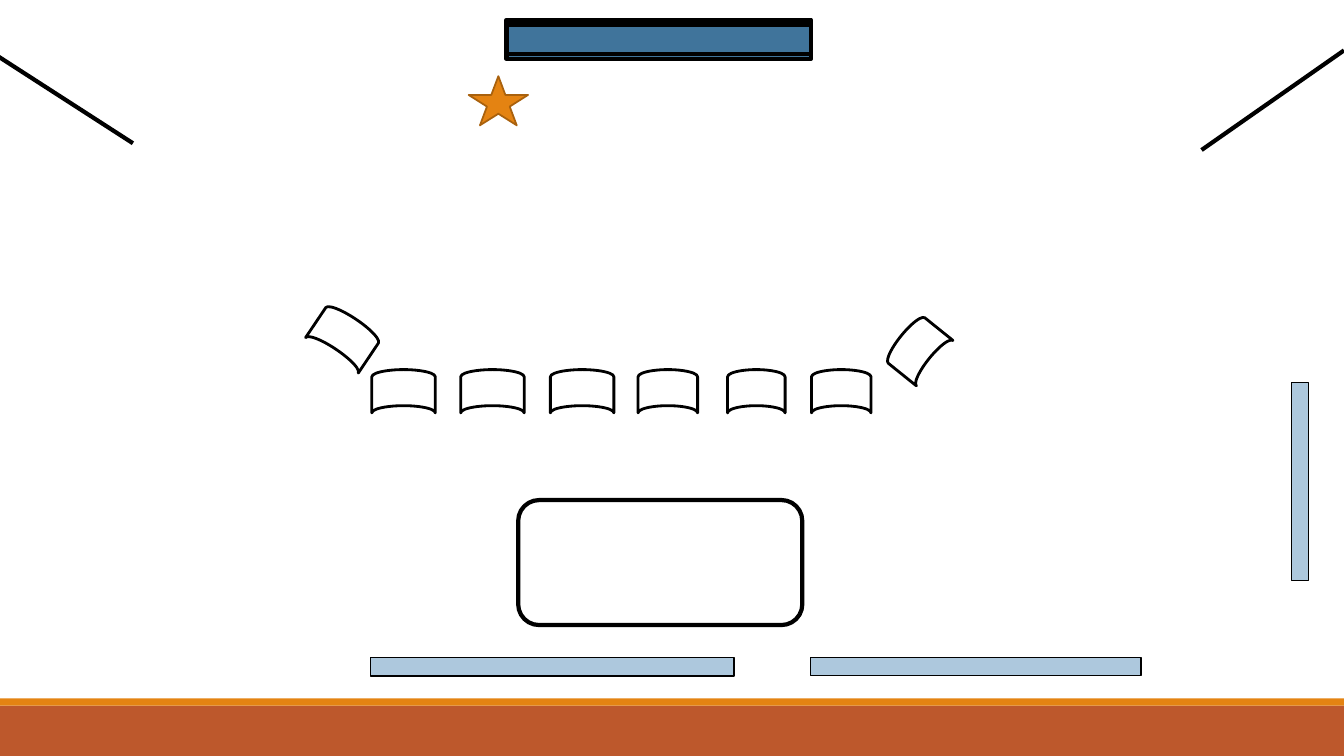
from lxml import etree
from pptx import Presentation
from pptx.dml.color import RGBColor
from pptx.enum.shapes import MSO_CONNECTOR, MSO_SHAPE
from pptx.oxml.ns import qn
from pptx.util import Cm, Pt

RECT = MSO_SHAPE.RECTANGLE
ROUNDED = MSO_SHAPE.ROUNDED_RECTANGLE
SCREEN = MSO_SHAPE.FLOWCHART_PREDEFINED_PROCESS
CHAIR = MSO_SHAPE.FLOWCHART_STORED_DATA
STAR = MSO_SHAPE.STAR_5_POINT
STRAIGHT = MSO_CONNECTOR.STRAIGHT

COLORS = {
    "black": "000000",
    "white": "FFFFFF",
    "rust": "BD582C",
    "orange": "E48312",
    "brown": "A9610D",
    "screen": "40749B",
    "window": "ADC8DD",
}
SLIDE_W, SLIDE_H = 33.87, 19.05


def rgb(name):
    return RGBColor.from_string(COLORS[name])


def add_centered(s, kind, cx, cy, w, h, fill, line=None, weight=1, rot=0):
    sp = s.shapes.add_shape(kind, Cm(cx - w / 2), Cm(cy - h / 2), Cm(w), Cm(h))
    sp.shadow.inherit = False
    sp.rotation = rot
    sp.fill.solid()
    sp.fill.fore_color.rgb = rgb(fill)
    if line:
        sp.line.color.rgb = rgb(line)
        sp.line.width = Pt(weight)
    else:
        sp.line.fill.background()


def add_wall(s, x1, y1, x2, y2):
    c = s.shapes.add_connector(STRAIGHT, Cm(x1), Cm(y1), Cm(x2), Cm(y2))
    c.line.color.rgb = rgb("black")
    c.line.width = Pt(3)
    etree.SubElement(c._element.spPr, qn("a:effectLst"))


def draw_footer(s, x, y, w, h):
    stripe = 0.18
    base = h - stripe
    add_centered(s, RECT, x + w / 2, y + stripe + base / 2, w, base, "rust")
    add_centered(s, RECT, x + w / 2, y + stripe / 2, w, stripe, "orange")


def draw_front(s, x, y, w):
    add_centered(s, SCREEN, x + 16.6, y + 0.99, 0.99, 7.67, "screen", "black", 3, 270)
    add_wall(s, x - 0.08, y + 1.4, x + 3.35, y + 3.61)
    add_wall(s, x + w, y + 1.27, x + w - 3.59, y + 3.78)
    add_centered(s, STAR, x + 12.56, y + 2.54, 1.5, 1.24, "orange", "brown", 1.25)


def draw_windows(s, x, y, w, h):
    add_centered(s, RECT, x + w - 1.1, y + h - 6.92, 4.98, 0.43, "window", "black", 1, 270)
    for cx, length, weight in [(13.92, 9.17, 1.25), (24.59, 8.33, 1)]:
        add_centered(s, RECT, x + cx, y + h - 2.25, 0.46, length, "window", "black", weight, 90)


def draw_table(s, x, y, w, h):
    add_centered(s, ROUNDED, x + w / 2, y + h / 2, h, w, "white", "black", 3, 270)


def draw_chairs(s, x, y):
    right_end = [(14.46, 0.31, 1.47, 38.8)]
    row = [(12.53, 1.5), (10.39, 1.45), (8.16, 1.5), (6, 1.6), (3.74, 1.6), (1.5, 1.6)]
    left_end = [(0, 0, 1.6, 123.9)]
    seats = right_end + [(dx, 1.36, size, 90) for dx, size in row] + left_end
    for dx, dy, size, rot in seats:
        add_centered(s, CHAIR, x + dx, y + dy, 1.09, size, "white", "black", 2, rot)


def main():
    prs = Presentation()
    prs.slide_width, prs.slide_height = Cm(SLIDE_W), Cm(SLIDE_H)
    s = prs.slides.add_slide(prs.slide_layouts[6])
    s.background.fill.solid()
    s.background.fill.fore_color.rgb = rgb("white")
    draw_footer(s, 0, 17.6, SLIDE_W, 1.45)
    draw_front(s, 0, 0, SLIDE_W)
    draw_windows(s, 0, 0, SLIDE_W, SLIDE_H)
    draw_table(s, 13.06, 12.6, 7.16, 3.15)
    draw_chairs(s, 8.67, 8.5)
    prs.save("out.pptx")


if __name__ == "__main__":
    main()
